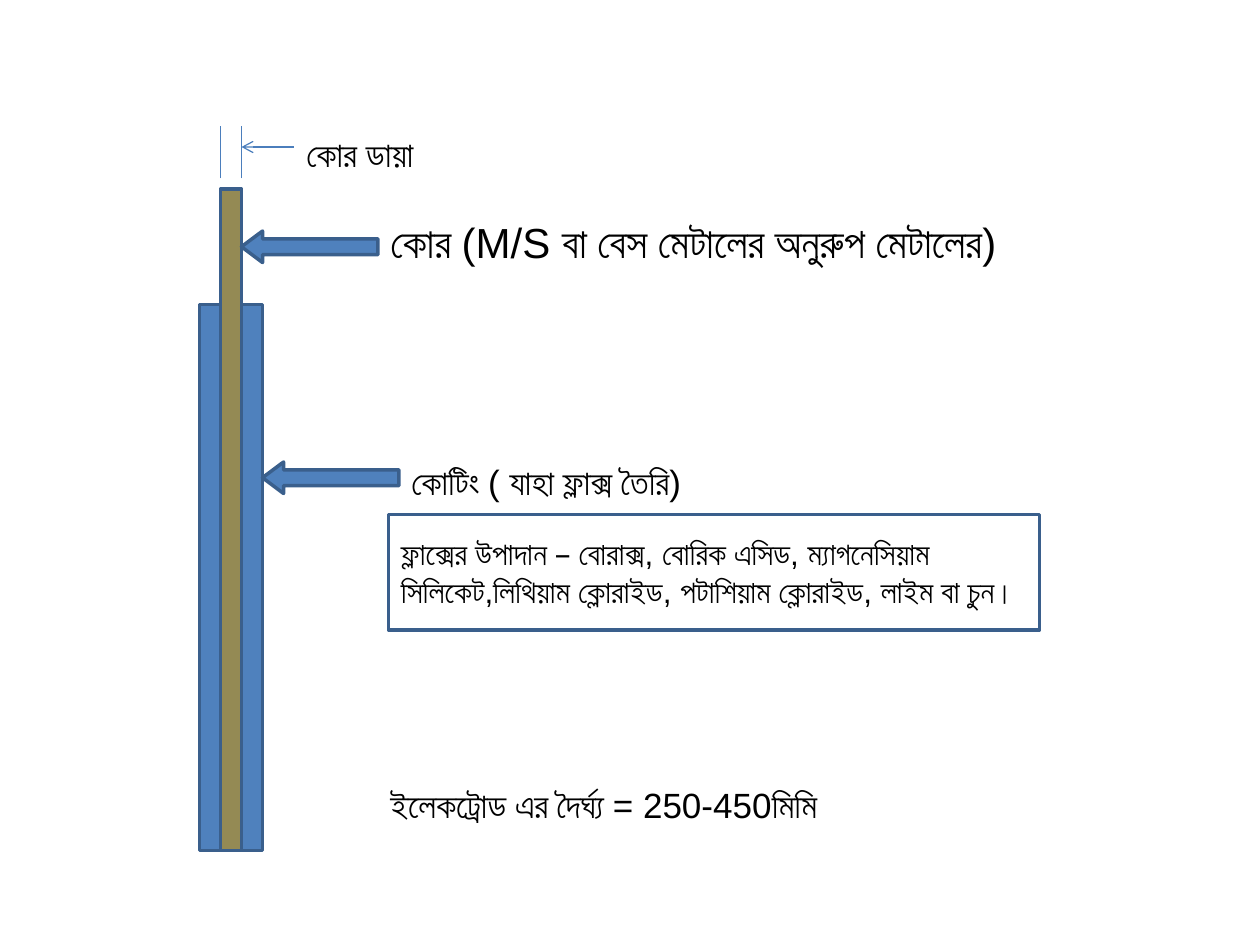
from lxml import etree
from pptx import Presentation
from pptx import util as u
from pptx.dml.color import RGBColor
from pptx.enum import shapes, text
from pptx.oxml.ns import qn

PX = 9525  # EMU in one px, 96 px to the inch
BLUE, CORE, EDGE, RULE = "4F81BD", "948A54", "3A5F8C", "4B7EBC"


def color(code):
    return RGBColor.from_string(code)


def px(*lengths):
    return [u.Emu(length * PX) for length in lengths]


def write(frame, words, size=20, ink="000000", font="Arial",
          anchor=text.MSO_ANCHOR.TOP):
    frame.word_wrap = True
    frame.vertical_anchor = anchor
    paragraph = frame.paragraphs[0]
    paragraph.alignment = text.PP_ALIGN.LEFT
    run = paragraph.add_run()
    run.text = words
    run.font.size = u.Pt(size)
    run.font.name = font
    run.font.color.rgb = color(ink)


class Diagram:
    def __init__(self, slide, edge=EDGE, edge_width=2, rule=RULE, rule_width=0.75):
        self.slide = slide
        self.edge, self.edge_width = edge, edge_width
        self.rule, self.rule_width = rule, rule_width

    def block(self, *box, fill=None, kind=shapes.MSO_SHAPE.RECTANGLE):
        block = self.slide.shapes.add_shape(kind, *px(*box))
        block.shadow.inherit = False
        if fill:
            block.fill.solid()
            block.fill.fore_color.rgb = color(fill)
        else:
            block.fill.background()
        block.line.color.rgb = color(self.edge)
        block.line.width = u.Pt(self.edge_width)
        return block

    def pointer(self, left, top):
        arrow = self.block(left, top, 104, 24, fill=BLUE,
                           kind=shapes.MSO_SHAPE.LEFT_ARROW)
        arrow.adjustments[1] = 0.67

    def label(self, words, *box, size=20):
        label = self.slide.shapes.add_textbox(*px(*box))
        write(label.text_frame, words, size=size)
        label.text_frame.auto_size = text.MSO_AUTO_SIZE.SHAPE_TO_FIT_TEXT

    def note(self, words, *box, size=18):
        note = self.block(*box)
        write(note.text_frame, words, size=size, anchor=text.MSO_ANCHOR.MIDDLE)

    def line(self, *ends, arrow=False):
        line = self.slide.shapes.add_connector(
            shapes.MSO_CONNECTOR.STRAIGHT, *px(*ends))
        line.line.color.rgb = color(self.rule)
        line.line.width = u.Pt(self.rule_width)
        if arrow:
            etree.SubElement(line.line._get_or_add_ln(), qn("a:tailEnd"), type="arrow")
        etree.SubElement(line._element.spPr, qn("a:effectLst"))


def main():
    deck = Presentation()
    deck.slide_width, deck.slide_height = px(960, 720)
    diagram = Diagram(deck.slides.add_slide(deck.slide_layouts[6]))

    # Electrode: core wire between two strips of coating
    bar, core_left, bottom = 16, 168, 648
    core_right = core_left + bar
    coating_right = core_right + bar
    for left, top, fill in ((core_right, 232, BLUE),
                            (core_left, 144, CORE),
                            (core_left - bar, 232, BLUE)):
        diagram.block(left, top, bar, bottom - top, fill=fill)

    # Core and coating pointers with their labels
    diagram.pointer(core_right, 176)
    diagram.pointer(coating_right, 352)
    diagram.label("কোর (M/S বা বেস মেটালের অনুরুপ মেটালের)", 288, 160, 496, 48, size=24)
    diagram.label("কোটিং ( যাহা ফ্লাক্স তৈরি)", 304, 346, 320, 42)

    # Core diameter dimension
    for edge in (core_right, core_left):
        diagram.line(edge, 136, edge, 96)
    diagram.line(224, 112, core_right, 112, arrow=True)
    diagram.label("কোর ডায়া", 224, 96, 144, 42)

    # Flux ingredients and electrode length
    diagram.note("ফ্লাক্সের উপাদান – বোরাক্স, বোরিক এসিড, ম্যাগনেসিয়াম "
                 "সিলিকেট,লিথিয়াম ক্লোরাইড, পটাশিয়াম ক্লোরাইড, লাইম বা চুন।",
                 296, 392, 496, 88)
    diagram.label("ইলেকট্রোড এর দৈর্ঘ্য = 250-450মিমি", 288, 592, 552, 42)

    deck.save("out.pptx")


if __name__ == "__main__":
    main()
